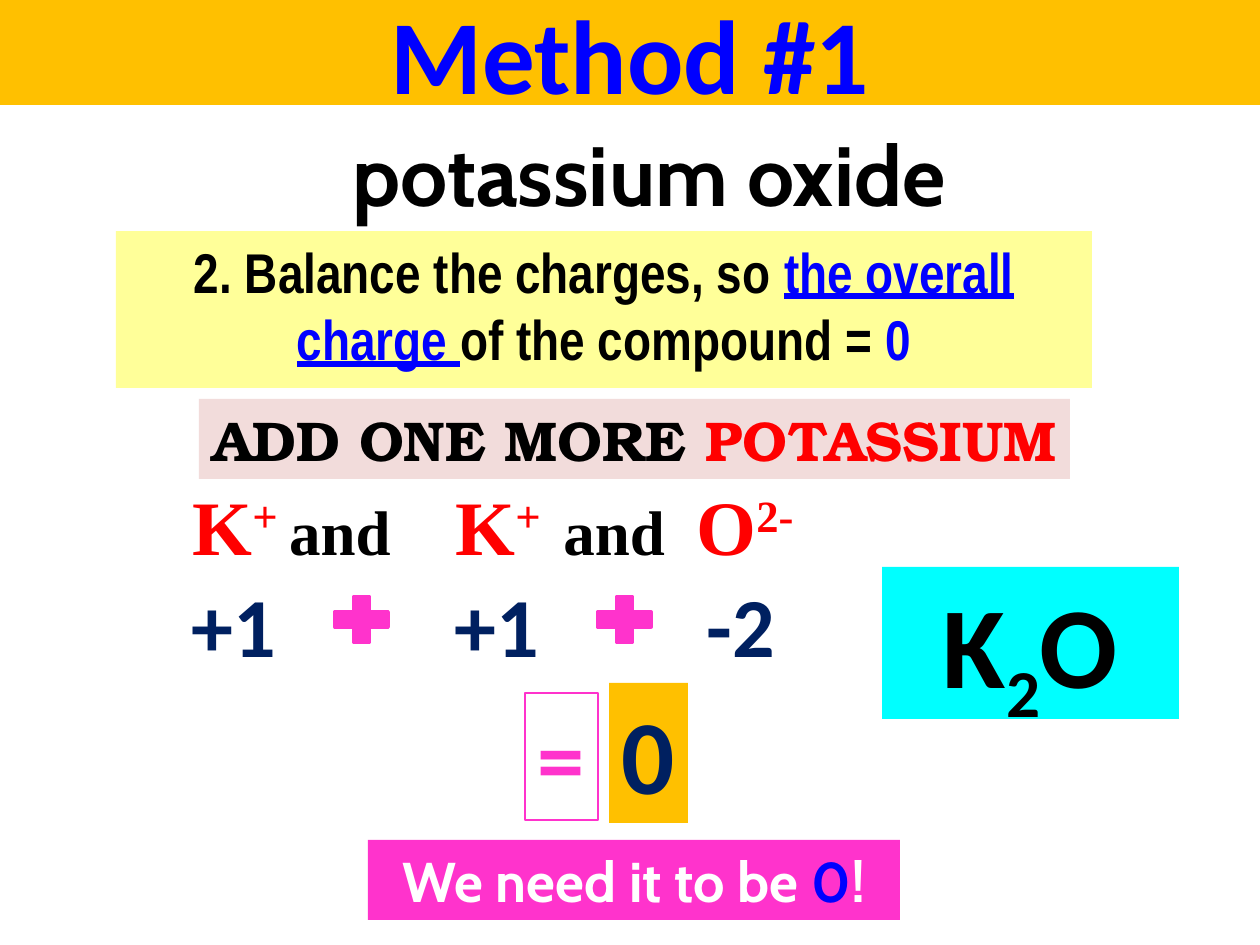
from pptx import Presentation
from pptx.dml.color import RGBColor
from pptx.enum.shapes import MSO_SHAPE
from pptx.enum.text import MSO_ANCHOR, PP_ALIGN
from pptx.util import Emu, Pt

RECTANGLE, PLUS = MSO_SHAPE.RECTANGLE, MSO_SHAPE.MATH_PLUS
TOP, MIDDLE = MSO_ANCHOR.TOP, MSO_ANCHOR.MIDDLE
CENTER = PP_ALIGN.CENTER

PX = 914400 / 126
WIDTH, HEIGHT = 1260, 945

BLACK = RGBColor(0x00, 0x00, 0x00)
WHITE = RGBColor(0xFF, 0xFF, 0xFF)
BLUE = RGBColor(0x00, 0x00, 0xFF)
NAVY = RGBColor(0x00, 0x20, 0x60)
RED = RGBColor(0xFF, 0x00, 0x00)
PINK = RGBColor(0xFF, 0x33, 0xCC)
GOLD = RGBColor(0xFF, 0xC0, 0x00)
YELLOW = RGBColor(0xFF, 0xFF, 0x99)
ROSE = RGBColor(0xF2, 0xDC, 0xDB)
CYAN = RGBColor(0x00, 0xFF, 0xFF)

CALIBRI, CABIN, TIMES = "Calibri", "Cabin", "Times New Roman"
SUPERSCRIPT, SUBSCRIPT = 30000, -25000

# Each run: text, then what differs from the format of its box
ION_K = [("K", {}), ("+ ", {"baseline": SUPERSCRIPT})]
ION_K_WIDE = [("K", {}), ("+  ", {"baseline": SUPERSCRIPT})]
ION_O = [("O", {}), ("2-", {"baseline": SUPERSCRIPT})]
AND = {"size": 36, "color": BLACK}

# Box (left, top, width, height), runs, format
TEXTS = [
    ((273, 116, 752, 105), [("potassium oxide", {})],
     dict(font=CABIN, size=48, before=4)),
    ((0, 0, WIDTH, 105), [("Method #1", {})],
     dict(size=60, color=BLUE, fill=GOLD, anchor=MIDDLE)),
    ((116, 231, 976, 157),
     [("2. Balance the charges, so ", {}),
      ("the overall charge ", {"color": BLUE, "underline": True}),
      ("of the compound = ", {}), ("0", {"color": BLUE})],
     dict(font="Arial Narrow", size=32, fill=YELLOW, before=4)),
    ((609, 683, 79, 140), [("0", {})],
     dict(size=60, color=NAVY, fill=GOLD, wrap=False)),
    ((525, 693, 73, 127), [("=", {})],
     dict(size=54, color=PINK, line=PINK, wrap=False)),
    ((368, 840, 532, 80),
     [("We need it to be ", {}), ("0", {"color": BLUE}), ("!", {})],
     dict(font=CABIN, size=32, color=WHITE, fill=PINK, wrap=False)),
    ((357, 472, 535, 116), ION_K_WIDE + [("and  ", AND)] + ION_O,
     dict(font=TIMES, size=44, color=RED, before=4)),
    ((199, 399, 871, 80),
     [("ADD ONE MORE ", {}), ("POTASSIUM", {"color": RED})],
     dict(font="TeX Gyre Bonum", size=32, fill=ROSE, wrap=False)),
    ((158, 472, 283, 116), ION_K + [("and ", AND)],
     dict(font=TIMES, size=44, color=RED, before=4)),
    ((882, 567, 297, 152),
     [("K", {}), ("2", {"baseline": SUBSCRIPT}), ("O", {})],
     dict(size=66, fill=CYAN)),
]

# Charge under each ion: text, left, width
CHARGES = [("+1", 178, 111), ("+1", 441, 111), ("-2", 693, 95)]
CHARGE_TOP, CHARGE_HEIGHT = 567, 115
PLUS_LEFTS = [325, 588]
PLUS_TOP, PLUS_WIDTH, PLUS_HEIGHT = 588, 73, 63


def emu(box):
    return [Emu(round(value * PX)) for value in box]


def add_text(slide, box, runs, *, font=CALIBRI, size, color=BLACK, fill=None,
             line=None, anchor=TOP, wrap=True, before=0):
    shape = slide.shapes.add_textbox(*emu(box))
    if fill is not None:
        shape.fill.solid()
        shape.fill.fore_color.rgb = fill
    if line is not None:
        shape.line.color.rgb = line
        shape.line.width = Pt(0.75)
    frame = shape.text_frame
    frame.word_wrap = wrap
    frame.vertical_anchor = anchor
    paragraph = frame.paragraphs[0]
    paragraph.alignment = CENTER
    paragraph.space_before = Pt(before)
    for text, changes in runs:
        run = paragraph.add_run()
        run.text = text
        run.font.name = font
        run.font.bold = True
        run.font.size = Pt(changes.get("size", size))
        run.font.color.rgb = changes.get("color", color)
        run.font.underline = changes.get("underline", False)
        if "baseline" in changes:
            run.font._element.set("baseline", str(changes["baseline"]))


def add_plus(slide, left):
    box = (left, PLUS_TOP, PLUS_WIDTH, PLUS_HEIGHT)
    shape = slide.shapes.add_shape(PLUS, *emu(box))
    shape.shadow.inherit = False
    shape.fill.solid()
    shape.fill.fore_color.rgb = PINK
    shape.line.color.rgb = PINK
    shape.line.width = Pt(2)


def main():
    presentation = Presentation()
    presentation.slide_width, presentation.slide_height = emu((WIDTH, HEIGHT))
    slide = presentation.slides.add_slide(presentation.slide_layouts[6])

    # Title, instructions, ions and formula
    for box, runs, style in TEXTS:
        add_text(slide, box, runs, **style)

    # Sum of the charges
    for text, left, width in CHARGES:
        add_text(slide, (left, CHARGE_TOP, width, CHARGE_HEIGHT), [(text, {})],
                 size=48, color=NAVY, wrap=False)
    for left in PLUS_LEFTS:
        add_plus(slide, left)

    presentation.save("out.pptx")


if __name__ == "__main__":
    main()
